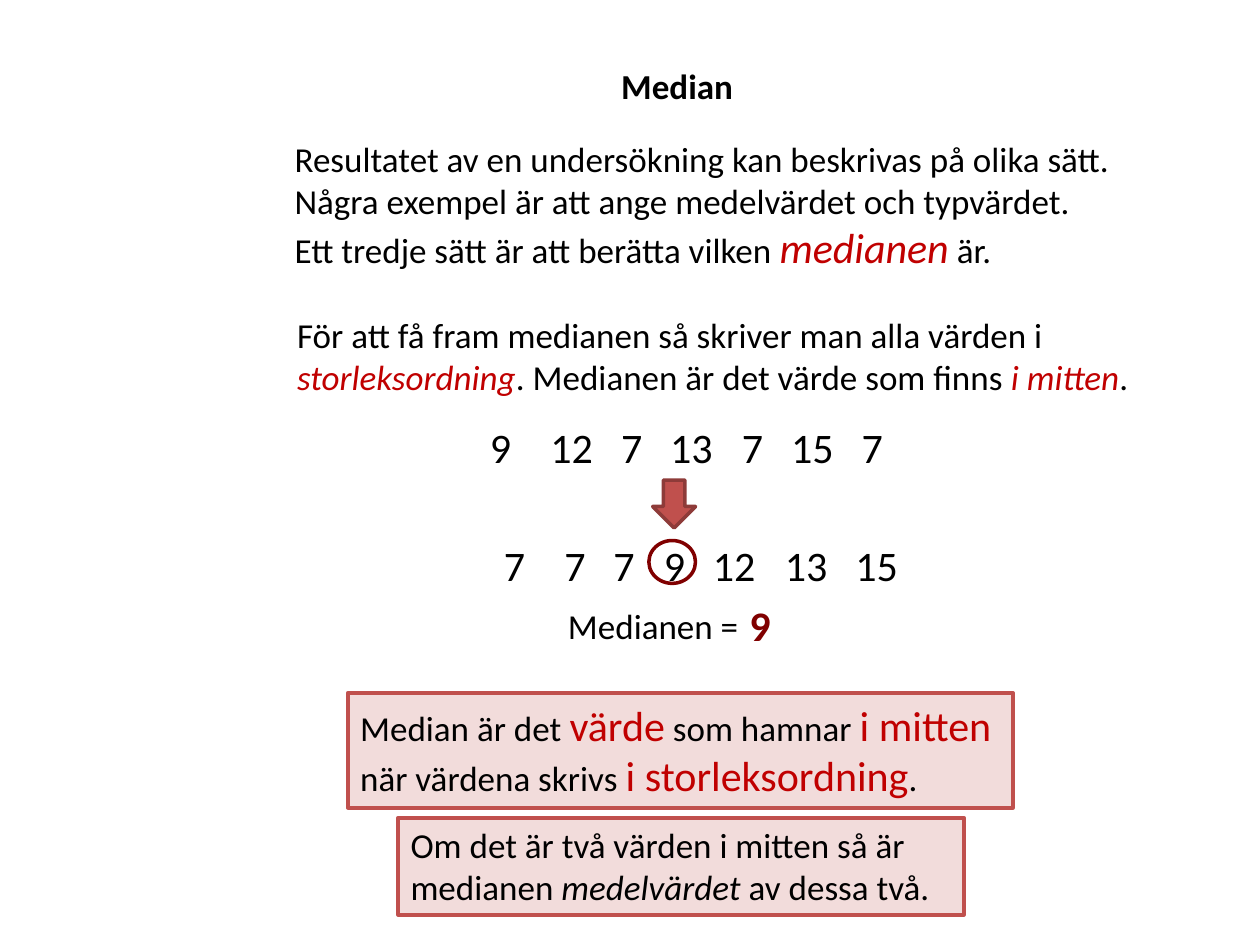
from lxml.etree import SubElement
from pptx import Presentation
from pptx.dml.color import RGBColor
from pptx.enum.shapes import MSO_SHAPE
from pptx.enum.text import MSO_ANCHOR, MSO_AUTO_SIZE, PP_ALIGN
from pptx.oxml.ns import qn
from pptx.util import Inches, Pt

BLACK = RGBColor(0x00, 0x00, 0x00)
RED = RGBColor(0xC0, 0x00, 0x00)
DARK_RED = RGBColor(0x80, 0x00, 0x00)
ROSE = RGBColor(0xF2, 0xDC, 0xDB)
BRICK = RGBColor(0xC0, 0x50, 0x4D)
BRICK_EDGE = RGBColor(0x8E, 0x3B, 0x39)
FONT = "Calibri"


def run(text, size=20, color=BLACK, bold=False, italic=False):
    return text, size, color, bold, italic


def inches(box):
    return [Inches(length) for length in box]


def write(shape, paragraphs, wrap=True):
    """Fill a shape with left-aligned paragraphs, each a list of runs."""
    frame = shape.text_frame
    frame.word_wrap = wrap
    frame.auto_size = MSO_AUTO_SIZE.NONE
    frame.vertical_anchor = MSO_ANCHOR.TOP
    for index, runs in enumerate(paragraphs):
        para = frame.paragraphs[0] if index == 0 else frame.add_paragraph()
        para.alignment = PP_ALIGN.LEFT
        for text, size, color, bold, italic in runs:
            span = para.add_run()
            span.text = text
            font = span.font
            font.name, font.size = FONT, Pt(size)
            font.bold, font.italic = bold, italic
            font.color.rgb = color


def add_text(shapes, box, paragraphs, wrap=True):
    shape = shapes.add_textbox(*inches(box))
    write(shape, paragraphs, wrap)
    return shape


def add_figure(page, kind, box, fill, line, width):
    shape = page.shapes.add_shape(kind, *inches(box))
    shape.shadow.inherit = False
    if fill is None:
        shape.fill.background()
    else:
        shape.fill.solid()
        shape.fill.fore_color.rgb = fill
    shape.line.color.rgb = line
    shape.line.width = Pt(width)
    return shape


def add_rule_box(page, box, paragraphs):
    shape = add_figure(page, MSO_SHAPE.RECTANGLE, box, ROSE, BRICK, 2.25)
    write(shape, paragraphs)


def add_number_row(page, box, numbers, stops):
    """One line of numbers, spaced with tab stops."""
    shape = add_text(page.shapes, box, [[run("\t".join(numbers), 24)]])
    properties = shape.text_frame.paragraphs[0]._p.get_or_add_pPr()
    tabs = SubElement(properties, qn("a:tabLst"))
    for stop in stops:
        SubElement(tabs, qn("a:tab"), pos=str(Inches(stop)), algn="l")


def add_title(page, box):
    title = page.shapes.title
    title.left, title.top, title.width, title.height = inches(box)
    write(title, [[run("Median", bold=True)]])


def add_answer(page, left, top):
    group = page.shapes.add_group_shape()
    add_text(group.shapes, (left, top + 0.04, 2.1, 0.77), [[run("Medianen =")]])
    add_text(group.shapes, (left + 1.44, top, 0.37, 0.5),
             [[run("9", 24, DARK_RED, bold=True)]], wrap=False)


def add_example(page, left, top):
    """Unsorted numbers, arrow, sorted numbers with the middle one ringed."""
    add_number_row(page, (left + 0.11, top + 0.93, 3.45, 0.5),
                   ["7", "7", "7", "9", "12", "13", "15"],
                   [0.48, 0.87, 1.27, 1.66, 2.23, 2.79])
    add_figure(page, MSO_SHAPE.OVAL, (left + 1.36, top + 0.99, 0.37, 0.34),
               None, DARK_RED, 2)
    add_answer(page, left + 0.62, top + 1.41)
    add_number_row(page, (left, top, 3.45, 0.5),
                   ["9", "12", "7", "13", "7", "15", "7"],
                   [0.48, 1.04, 1.43, 2.0, 2.39, 2.95])
    arrow = add_figure(page, MSO_SHAPE.RIGHT_ARROW,
                       (left + 1.37, top + 0.53, 0.38, 0.34), BRICK, BRICK_EDGE, 2)
    arrow.rotation = 90


def main():
    deck = Presentation()
    deck.slide_width, deck.slide_height = Inches(10), Inches(7.5)
    page = deck.slides.add_slide(deck.slide_layouts[5])

    add_title(page, (4.83, 0.46, 1.59, 0.44))

    # Introduction
    add_text(page.shapes, (2.24, 1.04, 6.8, 1.18), [
        [run("Resultatet av en undersökning kan beskrivas på olika sätt. "
             "Några exempel är att ange medelvärdet och typvärdet.")],
        [run("Ett tredje sätt är att berätta vilken "),
         run("medianen", 24, RED, italic=True), run(" är.")],
    ])
    # Method
    add_text(page.shapes, (2.26, 2.44, 7.54, 0.77), [
        [run("För att få fram medianen så skriver man alla värden i "),
         run("storleksordning", color=RED, italic=True),
         run(". Medianen är det värde som finns "),
         run("i mitten", color=RED, italic=True), run(".")],
    ])
    add_example(page, 3.79, 3.3)

    # Rules
    add_rule_box(page, (2.76, 5.5, 5.28, 0.91), [
        [run("Median är det "), run("värde", 24, RED), run(" som hamnar "),
         run("i mitten", 24, RED)],
        [run("när värdena skrivs "), run("i storleksordning", 24, RED), run(".")],
    ])
    add_rule_box(page, (3.16, 6.49, 4.49, 0.77), [
        [run("Om det är två värden i mitten så är medianen "),
         run("medelvärdet", italic=True), run(" av dessa två.")],
    ])
    deck.save("out.pptx")


if __name__ == "__main__":
    main()
